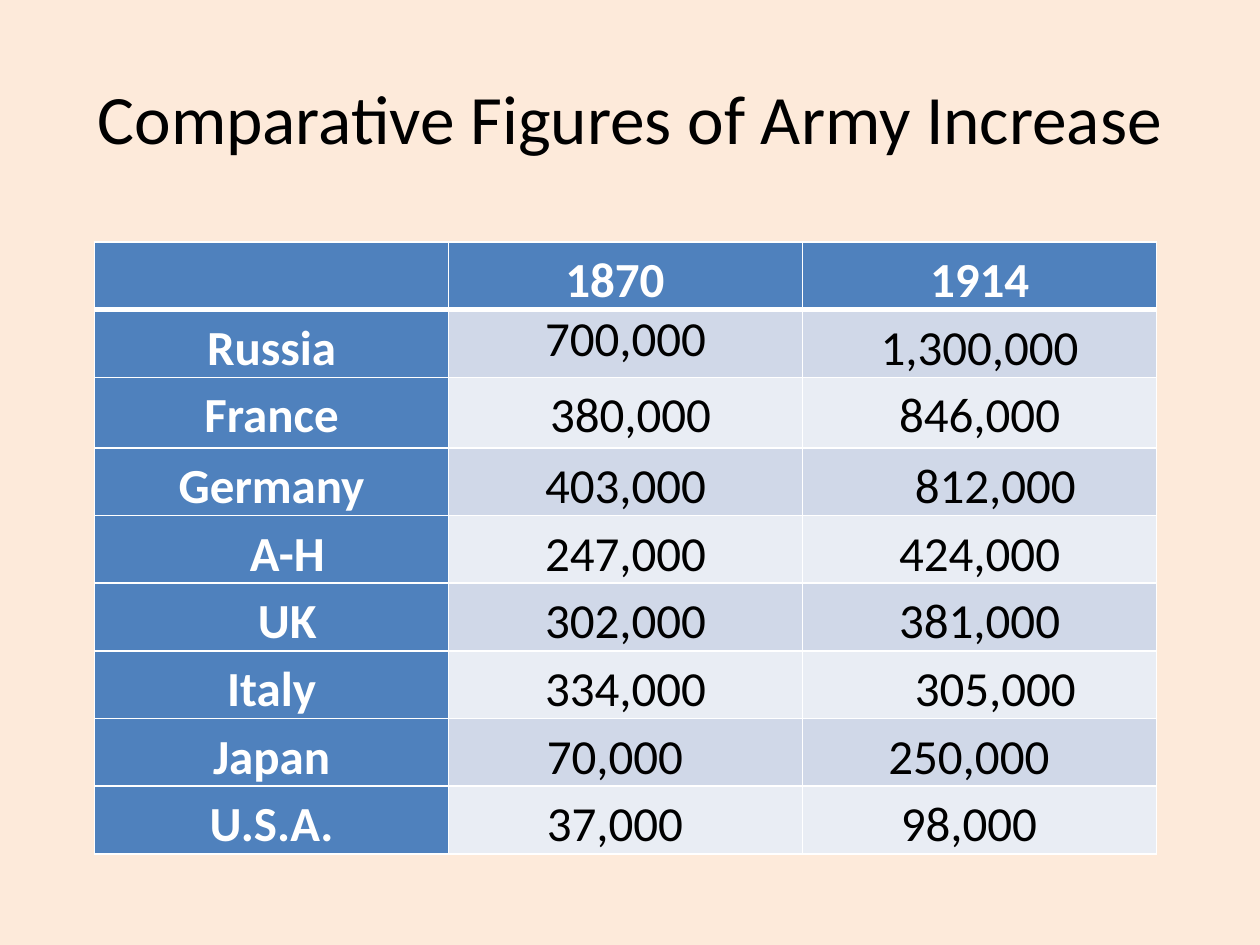
from lxml import etree
from pptx import Presentation
from pptx import util as u
from pptx.dml.color import RGBColor
from pptx.enum import text
from pptx.oxml import ns

PEACH = RGBColor(0xFD, 0xEA, 0xDA)
BLUE = RGBColor(0x4F, 0x81, 0xBD)
BAND_DARK = RGBColor(0xD0, 0xD8, 0xE8)
BAND_LIGHT = RGBColor(0xE9, 0xED, 0xF4)
WHITE = RGBColor(0xFF, 0xFF, 0xFF)
BLACK = RGBColor(0, 0, 0)

ARMIES = [
    ("", "1870", "1914"),
    ("Russia", "700,000", "1,300,000"),
    ("France", "380,000", "846,000"),
    ("Germany", "403,000", "812,000"),
    ("A-H", "247,000", "424,000"),
    ("UK", "302,000", "381,000"),
    ("Italy", "334,000", "305,000"),
    ("Japan", "70,000", "250,000"),
    ("U.S.A.", "37,000", "98,000"),
]
# Entries moved right by a paragraph indent, or left by a wider right margin
INDENTS = {"380,000": 0.08, "812,000": 0.25, "A-H": 0.25, "UK": 0.25, "305,000": 0.25}
MOVED_LEFT = {"1870", "70,000", "250,000", "37,000", "98,000"}


class SlideBuilder:
    font = "Calibri"
    title_size = 39.6
    table_size = 28
    cell_margin = 0.07
    left_shift = 0.17

    def __init__(self, slide):
        self.slide = slide

    def background(self, color):
        fill = self.slide.background.fill
        fill.solid()
        fill.fore_color.rgb = color

    def run(self, paragraph, words, size, color, bold=False):
        paragraph.alignment = text.PP_ALIGN.CENTER
        run = paragraph.add_run()
        run.text = words
        run.font.name = self.font
        run.font.size = u.Pt(size)
        run.font.bold = bold
        run.font.color.rgb = color

    def title(self, words, left, top, width, height):
        box = self.slide.shapes.add_textbox(
            u.Inches(left), u.Inches(top), u.Inches(width), u.Inches(height))
        frame = box.text_frame
        frame.word_wrap = True
        frame.vertical_anchor = text.MSO_ANCHOR.MIDDLE
        self.run(frame.paragraphs[0], words, self.title_size, BLACK)

    def borders(self, cell, top=1, bottom=1):
        props = cell._tc.get_or_add_tcPr()
        for side, width in (("L", 1), ("R", 1), ("T", top), ("B", bottom)):
            line = etree.SubElement(props, ns.qn(f"a:ln{side}"), w=str(u.Pt(width)))
            fill = etree.SubElement(line, ns.qn("a:solidFill"))
            etree.SubElement(fill, ns.qn("a:srgbClr"), val=str(WHITE))

    def cell(self, cell, words, fill, color, bold, spacing):
        cell.fill.solid()
        cell.fill.fore_color.rgb = fill
        if not words:
            return
        shift = self.left_shift if words in MOVED_LEFT else 0
        cell.margin_left = u.Inches(self.cell_margin)
        cell.margin_right = u.Inches(self.cell_margin + shift)
        cell.margin_top = cell.margin_bottom = 0
        paragraph = cell.text_frame.paragraphs[0]
        paragraph.line_spacing = spacing
        if words in INDENTS:
            props = paragraph._p.get_or_add_pPr()
            props.set("marL", str(u.Inches(INDENTS[words])))
            props.set("indent", "0")
        self.run(paragraph, words, self.table_size, color, bold)

    def table(self, rows, left, top, column_width, row_heights):
        columns = len(rows[0])
        table = self.slide.shapes.add_table(
            len(rows), columns, u.Inches(left), u.Inches(top),
            u.Inches(column_width * columns), u.Inches(sum(row_heights))).table
        for column in table.columns:
            column.width = u.Inches(column_width)
        for r, (row, height) in enumerate(zip(rows, row_heights)):
            table.rows[r].height = u.Inches(height)
            for c, words in enumerate(row):
                cell = table.cell(r, c)
                heading = r == 0 or c == 0
                band = BAND_DARK if r % 2 else BAND_LIGHT
                self.borders(cell, 3 if r == 1 else 1, 3 if r == 0 else 1)
                self.cell(cell, words, BLUE if heading else band,
                          WHITE if heading else BLACK, heading,
                          1.0 if words == "700,000" else 1.15)


def main():
    deck = Presentation()
    deck.slide_width, deck.slide_height = u.Inches(10), u.Inches(7.5)
    builder = SlideBuilder(deck.slides.add_slide(deck.slide_layouts[6]))

    # Background and title
    builder.background(PEACH)
    builder.title("Comparative Figures of Army Increase", 0.5, 0.3, 9, 1.25)

    # Army sizes by country; the France row is taller
    heights = [0.56 if row[0] == "France" else 0.43 for row in ARMIES]
    builder.table(ARMIES, 0.75, 1.92, 2.81, heights)

    deck.save("out.pptx")


if __name__ == "__main__":
    main()
